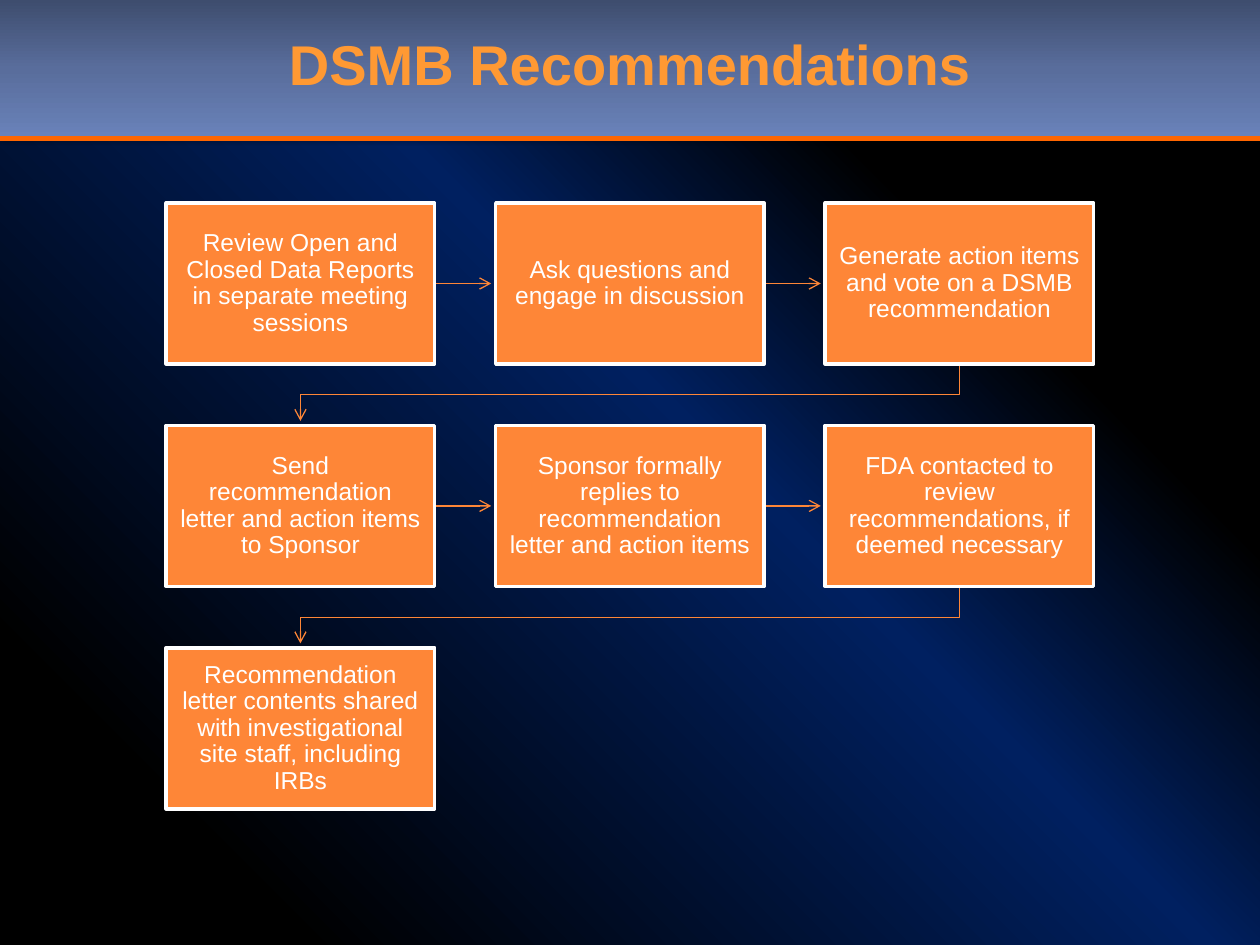
from lxml import etree
from pptx import Presentation
from pptx.dml.color import RGBColor
from pptx.enum.shapes import MSO_CONNECTOR, MSO_SHAPE
from pptx.enum.text import MSO_ANCHOR, PP_ALIGN
from pptx.oxml.ns import qn
from pptx.util import Pt

RECTANGLE = MSO_SHAPE.RECTANGLE
STRAIGHT = MSO_CONNECTOR.STRAIGHT
MIDDLE = MSO_ANCHOR.MIDDLE
CENTER = PP_ALIGN.CENTER

TITLE = "DSMB Recommendations"
STEPS = [
    "Review Open and Closed Data Reports in separate meeting sessions",
    "Ask questions and engage in discussion",
    "Generate action items and vote on a DSMB recommendation",
    "Send recommendation letter and action items to Sponsor",
    "Sponsor formally replies to recommendation letter and action items",
    "FDA contacted to review recommendations, if deemed necessary",
    "Recommendation letter contents shared with investigational site staff, including IRBs",
]
BACKGROUND_STOPS = [(14, "000000"), (55, "002060"), (75, "000000")]
HEADER_STOPS = [(0, "3E4D6E"), (50, "596D9C"), (100, "6982B9")]
ORANGE, WHITE = "FE8637", "FFFFFF"

SLIDE_WIDTH, SLIDE_HEIGHT = 720, 540
HEADER_HEIGHT, RULE_Y = 78.5, 79.2
COLUMNS = 3
LEFT, TOP = 95, 116
BOX_WIDTH, BOX_HEIGHT = 153.4, 92
COLUMN_STEP, ROW_STEP = 188.3, 127.1
ARROW_GAP = 2.6

TITLE_FONT = {"name": "Arial", "size": Pt(32), "bold": True}
STEP_FONT = {"name": "Arial", "size": Pt(14), "bold": False}


def color(hex_value):
    return RGBColor.from_string(hex_value)


def set_gradient(fill, element, stops, angle):
    """Give the fill inside element its stops; angle runs counter-clockwise."""
    fill.gradient()
    fill.gradient_angle = angle
    stop_list = element.find(".//" + qn("a:gsLst"))
    for stop in list(stop_list):
        stop_list.remove(stop)
    for position, hex_value in stops:
        stop = etree.SubElement(stop_list, qn("a:gs"), pos=str(position * 1000))
        etree.SubElement(stop, qn("a:srgbClr"), val=hex_value)


def add_shadow(effects, blur, distance, direction, opacity):
    shadow = etree.SubElement(
        effects, qn("a:outerShdw"), blurRad=str(Pt(blur)), dist=str(Pt(distance)),
        dir=str(direction * 60000), algn="ctr", rotWithShape="0")
    black = etree.SubElement(shadow, qn("a:srgbClr"), val="000000")
    etree.SubElement(black, qn("a:alpha"), val=str(opacity * 1000))


def set_line(shape, hex_value, width, arrow=False):
    shape.line.color.rgb = color(hex_value)
    shape.line.width = Pt(width)
    if arrow:
        line = shape.element.find(".//" + qn("a:ln"))
        etree.SubElement(line, qn("a:tailEnd"), type="arrow")


def write_text(shape, text, font_format, hex_value, line_spacing):
    frame = shape.text_frame
    frame.word_wrap = True
    frame.vertical_anchor = MIDDLE
    paragraph = frame.paragraphs[0]
    paragraph.alignment = CENTER
    paragraph.line_spacing = line_spacing
    run = paragraph.add_run()
    run.text = text
    for attribute, value in font_format.items():
        setattr(run.font, attribute, value)
    run.font.color.rgb = color(hex_value)


def add_straight(slide, start, end, hex_value, width, arrow=False):
    connector = slide.shapes.add_connector(STRAIGHT, *map(Pt, start + end))
    set_line(connector, hex_value, width, arrow)
    etree.SubElement(connector.element.spPr, qn("a:effectLst"))


def add_elbow(slide, start, end):
    middle_y = start[1] + (ROW_STEP - BOX_HEIGHT) / 2
    points = [(start[0], middle_y), (end[0], middle_y), end]
    builder = slide.shapes.build_freeform(Pt(start[0]), Pt(start[1]))
    builder.add_line_segments([(Pt(x), Pt(y)) for x, y in points], close=False)
    elbow = builder.convert_to_shape()
    elbow.shadow.inherit = False
    elbow.fill.background()
    set_line(elbow, ORANGE, 0.75, arrow=True)


def add_header(slide):
    header_area = [Pt(0), Pt(0), Pt(SLIDE_WIDTH), Pt(HEADER_HEIGHT)]
    header = slide.shapes.add_shape(RECTANGLE, *header_area)
    header.line.fill.background()
    header.shadow.inherit = False
    set_gradient(header.fill, header.element, HEADER_STOPS, 270)
    add_shadow(header.element.find(".//" + qn("a:effectLst")), 3.1, 1.8, 90, 35)
    add_straight(slide, (0, RULE_Y), (SLIDE_WIDTH, RULE_Y), "FF6600", 3)

    title = slide.shapes.title
    title.left, title.top, title.width, title.height = header_area
    write_text(title, TITLE, TITLE_FONT, "FF9933", 0.85)
    effects = etree.Element(qn("a:effectLst"))
    add_shadow(effects, 0, 2.5, 45, 100)
    title.element.find(".//" + qn("a:rPr")).find(qn("a:solidFill")).addnext(effects)
    slide.shapes.element.append(title.element)


def box_position(index):
    row, column = divmod(index, COLUMNS)
    return LEFT + column * COLUMN_STEP, TOP + row * ROW_STEP


def add_step(slide, index, text):
    x, y = box_position(index)
    box = slide.shapes.add_shape(
        RECTANGLE, Pt(x), Pt(y), Pt(BOX_WIDTH), Pt(BOX_HEIGHT))
    box.shadow.inherit = False
    box.fill.solid()
    box.fill.fore_color.rgb = color(ORANGE)
    set_line(box, WHITE, 2)
    for side in ("left", "right", "top", "bottom"):
        setattr(box.text_frame, f"margin_{side}", Pt(7.84))
    write_text(box, text, STEP_FONT, WHITE, 0.9)


def add_arrow(slide, index):
    """Link a step to the next one, bending where the row ends."""
    x, y = box_position(index)
    next_x, next_y = box_position(index + 1)
    if y == next_y:
        middle_y = y + BOX_HEIGHT / 2
        add_straight(slide, (x + BOX_WIDTH, middle_y),
                     (next_x - ARROW_GAP, middle_y), ORANGE, 0.75, arrow=True)
    else:
        half = BOX_WIDTH / 2
        add_elbow(slide, (x + half, y + BOX_HEIGHT),
                  (next_x + half, next_y - ARROW_GAP))


def main():
    presentation = Presentation()
    presentation.slide_width = Pt(SLIDE_WIDTH)
    presentation.slide_height = Pt(SLIDE_HEIGHT)
    slide = presentation.slides.add_slide(presentation.slide_layouts[5])
    set_gradient(slide.background.fill, slide.element, BACKGROUND_STOPS, 45)
    add_header(slide)
    for index, text in enumerate(STEPS):
        if index < len(STEPS) - 1:
            add_arrow(slide, index)
        add_step(slide, index, text)
    presentation.save("out.pptx")


if __name__ == "__main__":
    main()
